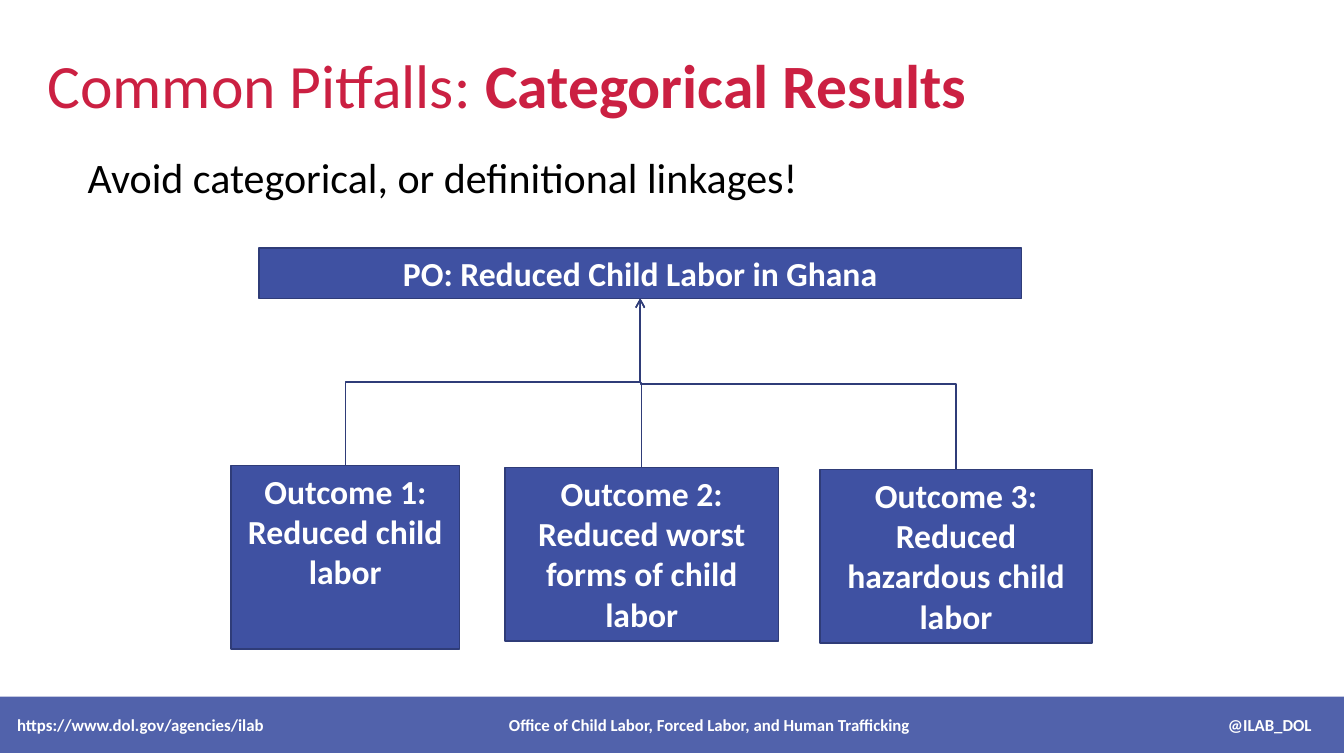
"""Build a slide that warns against categorical links between results."""
from dataclasses import dataclass

from lxml.etree import SubElement
from pptx import Presentation
from pptx.dml.color import RGBColor
from pptx.enum.shapes import MSO_CONNECTOR as Connector, MSO_SHAPE as Shape
from pptx.enum.text import MSO_ANCHOR as Anchor, MSO_AUTO_SIZE as AutoSize, PP_ALIGN as Align
from pptx.oxml.ns import qn
from pptx.util import Inches, Pt

WIDTH, HEIGHT = Inches(13.33), Inches(7.5)
TITLE_ONLY = 5
QUARTER_TURN_LEFT = "16200000"


@dataclass(frozen=True)
class Theme:
    """Colours, font and type sizes of the slide."""
    font: str = "Calibri"
    red: str = "CB2042"
    blue: str = "3F51A2"
    navy: str = "2F3C78"
    black: str = "000000"
    white: str = "FFFFFF"
    title: int = 44
    lead: int = 30
    body: int = 24
    footer: int = 12


THEME = Theme()
GOAL = ("PO: Reduced Child Labor in Ghana", (19.28, 32.8, 56.71, 6.67))
OUTCOMES = [
    ("Outcome 1: Reduced child labor", (17.18, 61.6, 17.03, 24.27)),
    ("Outcome 2: Reduced worst forms of child labor", (37.58, 61.87, 20.33, 22.93)),
    ("Outcome 3: Reduced hazardous child labor", (61, 62.13, 20.26, 22.93)),
]
FOOTER = [
    "https://www.dol.gov/agencies/ilab",
    "Office of Child Labor, Forced Labor, and Human Trafficking",
    "@ILAB_DOL",
]


def place(left, top, width, height):
    """Turn percentages of the slide's size into lengths."""
    return [int(share * side / 100)
            for share, side in zip((left, top, width, height), (WIDTH, HEIGHT) * 2)]


def write(box, *runs, size, color, align=Align.LEFT, anchor=Anchor.TOP, spacing=1.0):
    """Fill a box with one paragraph of (text, bold) runs and return it."""
    frame = box.text_frame
    frame.word_wrap = True
    frame.auto_size = AutoSize.NONE
    frame.vertical_anchor = anchor
    para = frame.paragraphs[0]
    para.alignment = align
    para.line_spacing = spacing
    for text, bold in runs:
        span = para.add_run()
        span.text = text
        span.font.name = THEME.font
        span.font.size = Pt(size)
        span.font.bold = bold
        span.font.color.rgb = RGBColor.from_string(color)
    return para


def add_block(page, spot, line=None):
    """Add a blue rectangle, outlined when a line colour is given."""
    block = page.shapes.add_shape(Shape.RECTANGLE, *place(*spot))
    block.shadow.inherit = False
    block.fill.solid()
    block.fill.fore_color.rgb = RGBColor.from_string(THEME.blue)
    if line:
        block.line.color.rgb = RGBColor.from_string(line)
        block.line.width = Pt(1)
    else:
        block.line.fill.background()
    return block


def add_result(page, text, spot):
    """Add a result box with centred bold text."""
    block = add_block(page, spot, line=THEME.navy)
    write(block, (text, True), size=THEME.body, color=THEME.white, align=Align.CENTER)
    return block


def add_elbow(page, outcome, goal):
    """Add an upright elbow arrow from an outcome's top to the goal's foot."""
    start_x, start_y = outcome.left + outcome.width // 2, outcome.top
    end_x, end_y = goal.left + goal.width // 2, goal.top + goal.height
    middle_x, middle_y = (start_x + end_x) // 2, (start_y + end_y) // 2
    half_rise, half_run = (start_y - end_y) // 2, (end_x - start_x) // 2
    elbow = page.shapes.add_connector(
        Connector.ELBOW, middle_x - half_rise, middle_y - half_run,
        middle_x + half_rise, middle_y + half_run)
    elbow.line.color.rgb = RGBColor.from_string(THEME.navy)
    elbow.line.width = Pt(1)
    properties = elbow._element.spPr
    properties.find(qn("a:xfrm")).set("rot", QUARTER_TURN_LEFT)
    SubElement(properties.find(qn("a:ln")), qn("a:tailEnd"), type="arrow")
    SubElement(properties, qn("a:effectLst"))


def add_footer(page):
    """Add the translucent footer bar with left, centre and right texts."""
    bar = add_block(page, (-0.3, 92.13, 100.3, 7.47))
    color = bar._element.spPr.find(qn("a:solidFill"))[0]
    SubElement(color, qn("a:alpha"), val="90000")
    para = write(bar, ("\t".join(FOOTER), True), size=THEME.footer,
                 color=THEME.white, anchor=Anchor.MIDDLE)
    margin = Inches(0.21)
    bar.text_frame.margin_left = margin
    tabs = SubElement(para._p.get_or_add_pPr(), qn("a:tabLst"))
    for share, align in ((52.8, "ctr"), (97.6, "r")):
        stop = int(share * WIDTH / 100) - bar.left - margin
        SubElement(tabs, qn("a:tab"), pos=str(stop), algn=align)


def main():
    """Build and save the deck."""
    deck = Presentation()
    deck.slide_width, deck.slide_height = WIDTH, HEIGHT
    page = deck.slides.add_slide(deck.slide_layouts[TITLE_ONLY])

    title = page.shapes.title
    title.left, title.top, title.width, title.height = place(2.78, 6.93, 80.5, 8.27)
    write(title, ("Common Pitfalls: ", False), ("Categorical Results", True),
          size=THEME.title, color=THEME.red, anchor=Anchor.MIDDLE)

    lead = page.shapes.add_textbox(*place(5.78, 19.33, 63.39, 8.93))
    write(lead, ("Avoid categorical, or definitional linkages!", False),
          size=THEME.lead, color=THEME.black, anchor=Anchor.MIDDLE, spacing=0.9)

    goal = add_result(page, *GOAL)
    for text, spot in OUTCOMES:
        add_elbow(page, add_result(page, text, spot), goal)
    add_footer(page)
    deck.save("out.pptx")


if __name__ == "__main__":
    main()
